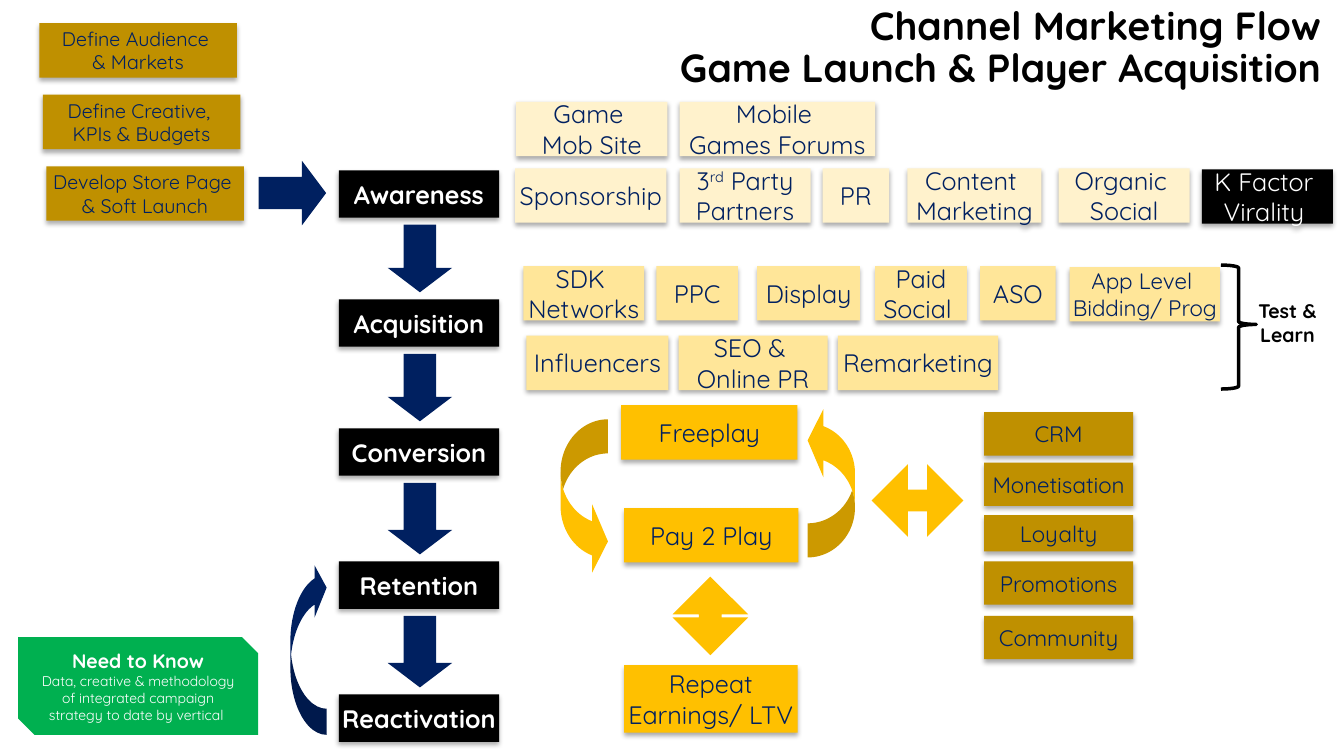
from lxml import etree
from pptx import Presentation
from pptx.dml.color import RGBColor
from pptx.enum.shapes import MSO_SHAPE as SHAPE
from pptx.enum.text import MSO_ANCHOR as ANCHOR, PP_ALIGN as ALIGN
from pptx.oxml.ns import qn
from pptx.util import Inches, Pt

FONT = "Quicksand"
BLACK = RGBColor(0x00, 0x00, 0x00)
WHITE = RGBColor(0xFF, 0xFF, 0xFF)
NAVY = RGBColor(0x00, 0x20, 0x60)
CREAM = RGBColor(0xFF, 0xF2, 0xCC)
YELLOW = RGBColor(0xFF, 0xE6, 0x99)
GOLD = RGBColor(0xFF, 0xC0, 0x00)
OCHRE = RGBColor(0xBF, 0x90, 0x00)
GREEN = RGBColor(0x00, 0xB0, 0x50)

# Content: ^ switches superscript on and off
TITLE = "Channel Marketing Flow\vGame Launch & Player Acquisition"
PREPARATION = ["Define Audience \n& Markets", "Define Creative, \nKPIs & Budgets",
               "Develop Store Page \n& Soft Launch"]
STAGES = [("Awareness", 1.69), ("Acquisition", 2.97), ("Conversion", 4.25),
          ("Retention", 5.57), ("Reactivation", 6.89)]
# Rows of channels: top, fill, then (text, left, width)
CHANNELS = [
    (1.01, CREAM, [("Game \nMob Site", 5.12, 1.5), ("Mobile \nGames Forums", 6.74, 1.94)]),
    (1.67, CREAM, [("Sponsorship", 5.11, 1.5), ("3^rd^ Party\nPartners", 6.74, 1.3),
                   ("PR", 8.16, 0.66), ("Content \nMarketing", 9, 1.33),
                   ("Organic \nSocial", 10.5, 1.3)]),
    (2.64, YELLOW, [("SDK \nNetworks", 5.19, 1.2), ("PPC", 6.51, 0.81),
                    ("Display", 7.51, 1.02), ("Paid\nSocial ", 8.68, 0.91),
                    ("ASO", 9.72, 0.75)]),
    (3.33, YELLOW, [("Influencers", 5.22, 1.41), ("SEO & \nOnline PR", 6.73, 1.48),
                    ("Remarketing", 8.31, 1.59)]),
]
PLAY = [("Freeplay", 6.16, 4.02, 1.75, 0.54), ("Pay 2 Play", 6.19, 5.04, 1.73, 0.54),
        ("Repeat\nEarnings/ LTV", 6.19, 6.6, 1.72, 0.67)]
# Retention tools: text, top, height
TOOLS = [("CRM", 4.09, 0.43), ("Monetisation", 4.59, 0.43), ("Loyalty", 5.11, 0.36),
         ("Promotions", 5.57, 0.43), ("Community", 6.11, 0.43)]
NOTE_HEAD = "Need to Know"
NOTE_BODY = ("Data, creative & methodology of integrated campaign "
             "strategy to date by vertical ")
BOX_H, STAGE_X, STAGE_W, STAGE_H = 0.54, 3.36, 1.59, 0.47
ARROW_W, ARROW_L, ARROW_GAP = 0.64, 0.67, 0.07
CURVE = (0.72, 1.44, 0.333)

prs = Presentation()
prs.slide_width, prs.slide_height = Inches(13.33), Inches(7.5)
slide = prs.slides.add_slide(prs.slide_layouts[6])


def style(p, size, color, bold=False, align=ALIGN.CENTER):
    p.alignment = align
    for r in p.runs:
        f = r.font
        f.name, f.size, f.bold, f.color.rgb = FONT, Pt(size), bold, color


def add_shape(kind, x, y, w, h, fill=None, adj=(), rot=0):
    sp = slide.shapes.add_shape(kind, Inches(x), Inches(y), Inches(w), Inches(h))
    sp.shadow.inherit = False
    sp.rotation = rot
    for i, value in enumerate(adj):
        sp.adjustments[i] = value
    if fill is not None:
        sp.fill.solid()
        sp.fill.fore_color.rgb = fill
        sp.line.fill.background()
    else:
        sp.fill.background()
    return sp


def add_shadow(sp):
    effects = sp.element.spPr.find(qn("a:effectLst"))
    shadow = etree.SubElement(effects, qn("a:outerShdw"), blurRad=str(Pt(3.5)),
                              dist=str(Pt(2.2)), dir="5400000", rotWithShape="0")
    color = etree.SubElement(shadow, qn("a:srgbClr"), val="000000")
    etree.SubElement(color, qn("a:alpha"), val="32000")


def add_box(text, x, y, w, h, fill, size=18, color=NAVY, bold=False):
    sp = add_shape(SHAPE.RECTANGLE, x, y, w, h, fill)
    add_shadow(sp)
    tf = sp.text_frame
    tf.word_wrap = False
    tf.vertical_anchor = ANCHOR.MIDDLE
    for i, line in enumerate(text.split("\n")):
        p = tf.add_paragraph() if i else tf.paragraphs[0]
        for j, part in enumerate(line.split("^")):
            r = p.add_run()
            r.text = part
            if j % 2:
                r.font._element.set("baseline", "30000")
        style(p, size, color, bold)


def add_label(text, x, y, w, h, size, align):
    tf = slide.shapes.add_textbox(Inches(x), Inches(y), Inches(w), Inches(h)).text_frame
    tf.word_wrap = True
    tf.text = text
    style(tf.paragraphs[0], size, BLACK, True, align)
    return tf


# Title
tf = add_label(TITLE, 5.77, 0.25, 7.43, 0.47, 28, ALIGN.RIGHT)
tf.vertical_anchor = ANCHOR.MIDDLE
tf.paragraphs[0].line_spacing = 0.9

# Preparation steps and the arrow into the funnel
for i, text in enumerate(PREPARATION):
    add_box(text, 0.39 + 0.035 * i, 0.23 + 0.71 * i, 1.96, BOX_H, OCHRE, 14)
add_shape(SHAPE.DOWN_ARROW, 2.58, 1.58, ARROW_W, ARROW_L, NAVY, (0.5, 0.375), 270)

# Funnel stages, each with an arrow to the next
for text, y in STAGES:
    add_box(text, STAGE_X, y, STAGE_W, STAGE_H, BLACK, 18, WHITE, True)
for (_, y), (_, next_y) in zip(STAGES, STAGES[1:]):
    top = y + STAGE_H + ARROW_GAP
    add_shape(SHAPE.DOWN_ARROW, STAGE_X + (STAGE_W - ARROW_W) / 2 + 0.01, top, ARROW_W,
              next_y - ARROW_GAP - top, NAVY, (0.5, 0.38))
back = add_shape(SHAPE.CURVED_RIGHT_ARROW, 2.88, 5.57, 0.36, 1.72, NAVY, CURVE, 180)
back.element.spPr.find(qn("a:xfrm")).set("flipH", "1")

# Channels
for y, fill, row in CHANNELS:
    for text, x, w in row:
        add_box(text, x, y, w, BOX_H, fill)
add_box("App Level \nBidding/ Prog", 10.61, 2.65, 1.49, BOX_H, YELLOW, 16)
add_box("K Factor \nVirality ", 11.92, 1.68, 1.3, BOX_H, BLACK, 18, WHITE)

# Test and learn brace
brace = add_shape(SHAPE.RIGHT_BRACE, 12.11, 2.63, 0.35, 1.23, adj=(0.083, 0.479))
brace.line.color.rgb = BLACK
brace.line.width = Pt(2.5)
add_label("Test & Learn", 12.37, 2.92, 0.8, 0.57, 14, ALIGN.CENTER)

# Play loop and retention tools
for text, x, y, w, h in PLAY:
    add_box(text, x, y, w, h, GOLD)
for text, y, h in TOOLS:
    add_box(text, 9.76, y, 1.48, h, OCHRE, 16)
add_shape(SHAPE.CURVED_RIGHT_ARROW, 5.56, 4.16, 0.47, 1.55, GOLD, CURVE)
add_shape(SHAPE.CURVED_RIGHT_ARROW, 8.01, 4.03, 0.47, 1.5, GOLD, CURVE, 180)
add_shape(SHAPE.UP_DOWN_ARROW, 6.67, 5.72, 0.75, 0.78, GOLD, (0.5, 0.3))
add_shape(SHAPE.UP_DOWN_ARROW, 8.74, 4.51, 0.72, 0.91, GOLD, (0.5, 0.3), 90)

# Need to know note
note = add_shape(SHAPE.SNIP_2_DIAG_RECTANGLE, 0.18, 6.32, 2.38, 0.97, GREEN)
tf = note.text_frame
tf.word_wrap = True
tf.vertical_anchor = ANCHOR.MIDDLE
tf.text = NOTE_HEAD
style(tf.paragraphs[0], 14, WHITE, True)
p = tf.add_paragraph()
p.text = NOTE_BODY
style(p, 10, WHITE)

prs.save("out.pptx")
